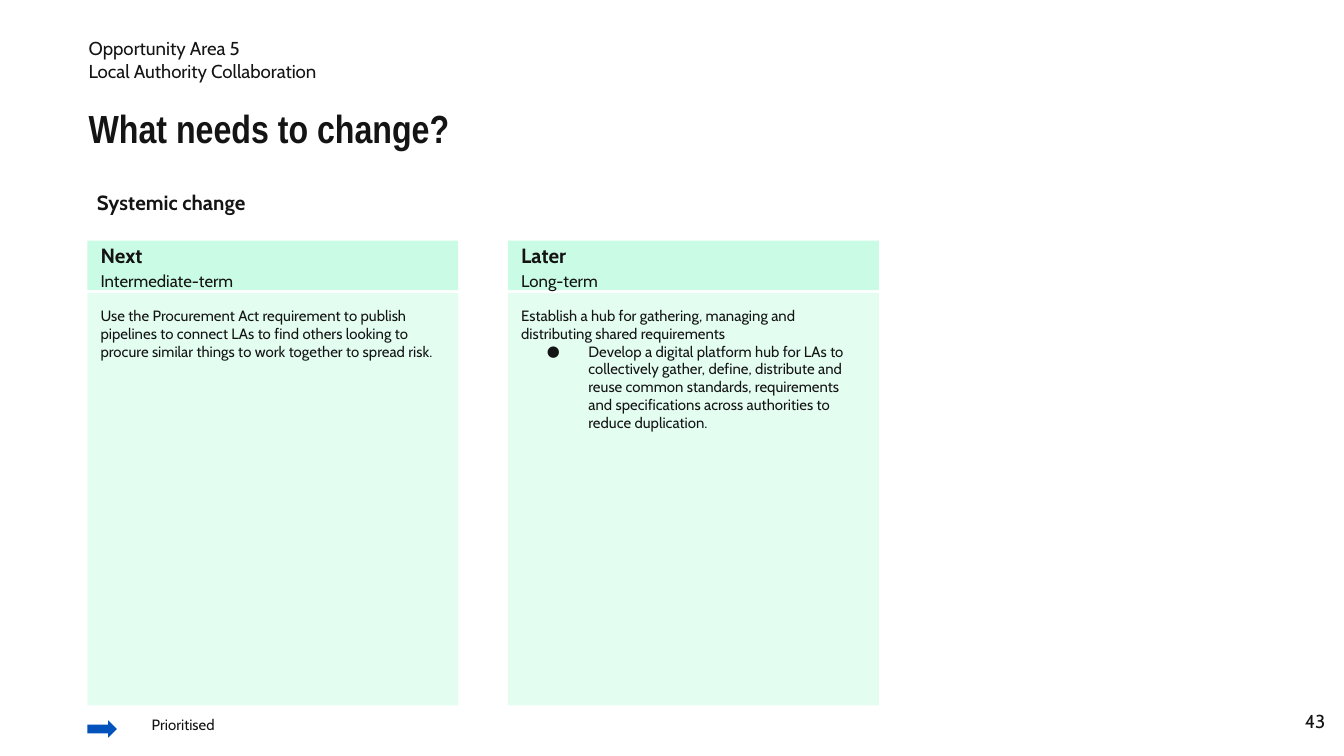
from dataclasses import dataclass

from lxml import etree
from pptx import Presentation
from pptx import util as u
from pptx.dml.color import RGBColor
from pptx.enum import shapes, text
from pptx.oxml import ns


@dataclass(frozen=True)
class Theme:
    ink: str = "141414"
    mint: str = "CAFCE5"
    blue: str = "0252BB"
    body_font: str = "Cabin"
    title_font: str = "Arial Narrow"
    title: int = 21
    heading: int = 11
    label: int = 10
    term: int = 9
    body: int = 8


THEME = Theme()
COLUMN_WIDTH = 2.76
COLUMN_LEFT = 0.65
COLUMN_STEP = 3.13


@dataclass(frozen=True)
class Box:
    left: float
    top: float
    width: float
    height: float

    def lengths(self) -> tuple:
        return tuple(u.Inches(v) for v in (self.left, self.top, self.width, self.height))


@dataclass(frozen=True)
class Line:
    words: str
    size: int
    bold: bool = False
    font: str = THEME.body_font
    align: text.PP_ALIGN = text.PP_ALIGN.LEFT
    spacing: float = 1.0
    before: int = 0
    after: int = 0
    bullet: bool = False


@dataclass(frozen=True)
class Column:
    left: float
    heading: str
    term: str
    body: str
    points: tuple = ()


def add_bullet(paragraph) -> None:
    properties = paragraph._p.get_or_add_pPr()
    properties.set("marL", str(u.Inches(0.5)))
    properties.set("indent", str(u.Inches(-0.31)))
    color = etree.SubElement(properties, ns.qn("a:buClr"))
    etree.SubElement(color, ns.qn("a:srgbClr"), val=THEME.ink)
    etree.SubElement(properties, ns.qn("a:buFont"), typeface=THEME.body_font)
    etree.SubElement(properties, ns.qn("a:buChar"), char="●")


def write(frame, lines: list[Line], side: float, anchor: text.MSO_ANCHOR) -> None:
    frame.word_wrap = True
    frame.vertical_anchor = anchor
    frame.margin_left = frame.margin_right = u.Inches(side)
    frame.margin_top = frame.margin_bottom = u.Inches(0.1)
    for index, line in enumerate(lines):
        paragraph = frame.add_paragraph() if index else frame.paragraphs[0]
        paragraph.text = line.words
        paragraph.alignment = line.align
        paragraph.line_spacing = line.spacing
        paragraph.space_before = u.Pt(line.before)
        paragraph.space_after = u.Pt(line.after)
        if line.bullet:
            add_bullet(paragraph)
        paragraph.font.name = line.font
        paragraph.font.size = u.Pt(line.size)
        paragraph.font.bold = line.bold
        paragraph.font.color.rgb = RGBColor.from_string(THEME.ink)


def add_text(slide, box: Box, lines: list[Line], side: float = 0,
             anchor: text.MSO_ANCHOR = text.MSO_ANCHOR.TOP) -> None:
    write(slide.shapes.add_textbox(*box.lengths()).text_frame, lines, side, anchor)


def add_shape(slide, kind: shapes.MSO_SHAPE, box: Box, color: str, opacity: int = 100):
    shape = slide.shapes.add_shape(kind, *box.lengths())
    shape.shadow.inherit = False
    shape.line.fill.background()
    shape.fill.solid()
    shape.fill.fore_color.rgb = RGBColor.from_string(color)
    if opacity < 100:
        fill_color = shape._element.spPr.find(".//" + ns.qn("a:srgbClr"))
        etree.SubElement(fill_color, ns.qn("a:alpha"), val=str(opacity * 1000))
    return shape


def add_column(slide, column: Column) -> None:
    rectangle = shapes.MSO_SHAPE.RECTANGLE
    header = add_shape(slide, rectangle, Box(column.left, 1.79, COLUMN_WIDTH, 0.37), THEME.mint)
    write(header.text_frame, [
        Line(column.heading, THEME.heading, bold=True, spacing=1.15),
        Line(column.term, THEME.term, spacing=1.15),
    ], 0.1, text.MSO_ANCHOR.MIDDLE)
    panel = add_shape(slide, rectangle, Box(column.left, 2.18, COLUMN_WIDTH, 3.07), THEME.mint, 51)
    points = [Line(point, THEME.body, bullet=True) for point in column.points]
    write(panel.text_frame, [Line(column.body, THEME.body), *points], 0.1, text.MSO_ANCHOR.TOP)


def main() -> None:
    presentation = Presentation()
    presentation.slide_width = u.Inches(10)
    presentation.slide_height = u.Inches(10 * 9 / 16)
    slide = presentation.slides.add_slide(presentation.slide_layouts[6])

    add_text(slide, Box(9.36, 5.2, 0.6, 0.43),
             [Line("43", THEME.label, align=text.PP_ALIGN.RIGHT)], 0.1)
    add_text(slide, Box(0.66, 0.21, 4.73, 0.47), [
        Line("Opportunity Area 5", THEME.label),
        Line("Local Authority Collaboration", THEME.label),
    ], anchor=text.MSO_ANCHOR.MIDDLE)
    add_text(slide, Box(0.66, 0.68, 5.19, 0.5),
             [Line("What needs to change?", THEME.title, True, THEME.title_font, after=10)])
    add_text(slide, Box(0.72, 1.32, 6.62, 0.37),
             [Line("Systemic change", THEME.heading, True, before=12)])

    columns = [
        Column(COLUMN_LEFT, "Next", "Intermediate-term",
               "Use the Procurement Act requirement to publish pipelines to connect LAs to find "
               "others looking to procure similar things to work together to spread risk."),
        Column(COLUMN_LEFT + COLUMN_STEP, "Later", "Long-term",
               "Establish a hub for gathering, managing and distributing shared requirements",
               ("Develop a digital platform hub for LAs to collectively gather, define, distribute "
                "and reuse common standards, requirements and specifications across authorities "
                "to reduce duplication.",)),
    ]
    for column in columns:
        add_column(slide, column)

    add_shape(slide, shapes.MSO_SHAPE.RIGHT_ARROW, Box(COLUMN_LEFT, 5.36, 0.22, 0.13), THEME.blue)
    add_text(slide, Box(1.03, 5.26, 0.81, 0.13), [Line("Prioritised", THEME.body)], 0.1)
    presentation.save("out.pptx")


if __name__ == "__main__":
    main()
